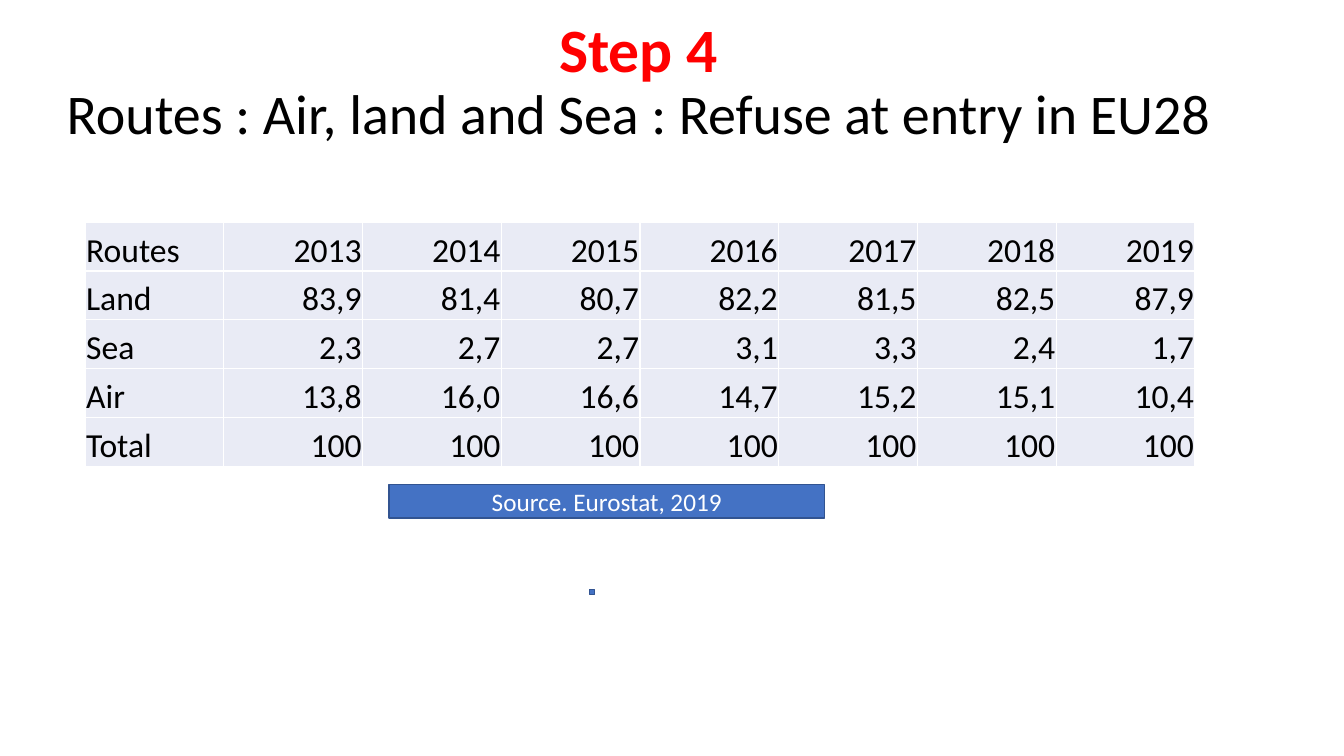
"""Build the slide on refusals of entry in EU28 by route."""
from dataclasses import dataclass

from lxml import etree
from pptx import Presentation
from pptx.dml.color import RGBColor
from pptx.enum.shapes import MSO_SHAPE
from pptx.enum.text import MSO_ANCHOR, PP_ALIGN
from pptx.oxml.ns import qn
from pptx.util import Pt

RECTANGLE = MSO_SHAPE.RECTANGLE
MIDDLE, BOTTOM = MSO_ANCHOR.MIDDLE, MSO_ANCHOR.BOTTOM
LEFT, CENTER, RIGHT = PP_ALIGN.LEFT, PP_ALIGN.CENTER, PP_ALIGN.RIGHT


@dataclass(frozen=True)
class Theme:
    """Font, colours and type sizes."""
    font: str = "Calibri"
    step: str = "FF0000"
    ink: str = "000000"
    white: str = "FFFFFF"
    accent: str = "4472C4"
    outline: str = "325491"
    cell: str = "E9EBF5"
    step_size: int = 44
    title_size: int = 40
    table_size: int = 24
    source_size: int = 18


THEME = Theme()
STEP = "Step 4"
TITLE = "Routes : Air, land and Sea : Refuse at entry in EU28"
SOURCE = "Source. Eurostat, 2019"
ROUTES = [
    ("Routes", "2013", "2014", "2015", "2016", "2017", "2018", "2019"),
    ("Land", "83,9", "81,4", "80,7", "82,2", "81,5", "82,5", "87,9"),
    ("Sea", "2,3", "2,7", "2,7", "3,1", "3,3", "2,4", "1,7"),
    ("Air", "13,8", "16,0", "16,6", "14,7", "15,2", "15,1", "10,4"),
    ("Total",) + ("100",) * 7,
]

SLIDE_SIZE = (960, 540)
TITLE_BOX = (5.8, 5, 900.7, 108.7)
TABLE_ORIGIN = (60.8, 158.8)
COLUMN_WIDTH, ROW_HEIGHT = 99.1, 34.85
SOURCE_BOX = (277.9, 346.3, 311, 23.8)
MARK_BOX = (421.2, 421.2, 3.6, 3.6)


def points(values):
    return [Pt(value) for value in values]


def style(paragraph, text, size, color, alignment, bold=False):
    paragraph.text = text
    paragraph.alignment = alignment
    font = paragraph.font
    font.name, font.size, font.bold = THEME.font, Pt(size), bold
    font.color.rgb = RGBColor.from_string(color)


def add_title(slide):
    frame = slide.shapes.add_textbox(*points(TITLE_BOX)).text_frame
    frame.word_wrap = True
    frame.vertical_anchor = MIDDLE
    style(frame.paragraphs[0], STEP, THEME.step_size, THEME.step, CENTER, True)
    style(frame.add_paragraph(), TITLE, THEME.title_size, THEME.ink, CENTER)
    for paragraph in frame.paragraphs:
        paragraph.line_spacing = 0.9


def add_rectangle(slide, box):
    shape = slide.shapes.add_shape(RECTANGLE, *points(box))
    shape.shadow.inherit = False
    shape.fill.solid()
    shape.fill.fore_color.rgb = RGBColor.from_string(THEME.accent)
    shape.line.color.rgb = RGBColor.from_string(THEME.outline)
    shape.line.width = Pt(1)
    return shape


def add_source(slide):
    frame = add_rectangle(slide, SOURCE_BOX).text_frame
    frame.word_wrap = True
    frame.vertical_anchor = MIDDLE
    style(frame.paragraphs[0], SOURCE, THEME.source_size, THEME.white, CENTER)


def set_borders(cell):
    properties = cell._tc.get_or_add_tcPr()
    for index, side in enumerate(("a:lnL", "a:lnR", "a:lnT", "a:lnB")):
        line = etree.Element(qn(side), w=str(Pt(1)))
        fill = etree.SubElement(line, qn("a:solidFill"))
        etree.SubElement(fill, qn("a:srgbClr"), val=THEME.white)
        properties.insert(index, line)


def add_routes_table(slide):
    row_count, column_count = len(ROUTES), len(ROUTES[0])
    size = (COLUMN_WIDTH * column_count, ROW_HEIGHT * row_count)
    table = slide.shapes.add_table(
        row_count, column_count, *points(TABLE_ORIGIN + size)).table
    table.first_row = table.horz_banding = False
    for column in table.columns:
        column.width = Pt(COLUMN_WIDTH)
    for row, values in zip(table.rows, ROUTES):
        row.height = Pt(ROW_HEIGHT)
        for index, (cell, value) in enumerate(zip(row.cells, values)):
            cell.margin_left = cell.margin_right = cell.margin_top = Pt(0.75)
            cell.margin_bottom = Pt(0)
            cell.vertical_anchor = BOTTOM
            cell.fill.solid()
            cell.fill.fore_color.rgb = RGBColor.from_string(THEME.cell)
            set_borders(cell)
            style(cell.text_frame.paragraphs[0], value, THEME.table_size,
                  THEME.ink, RIGHT if index else LEFT)


def main():
    presentation = Presentation()
    presentation.slide_width, presentation.slide_height = points(SLIDE_SIZE)
    slide = presentation.slides.add_slide(presentation.slide_layouts[6])
    add_title(slide)
    add_source(slide)
    add_routes_table(slide)
    add_rectangle(slide, MARK_BOX)
    presentation.save("out.pptx")


if __name__ == "__main__":
    main()
